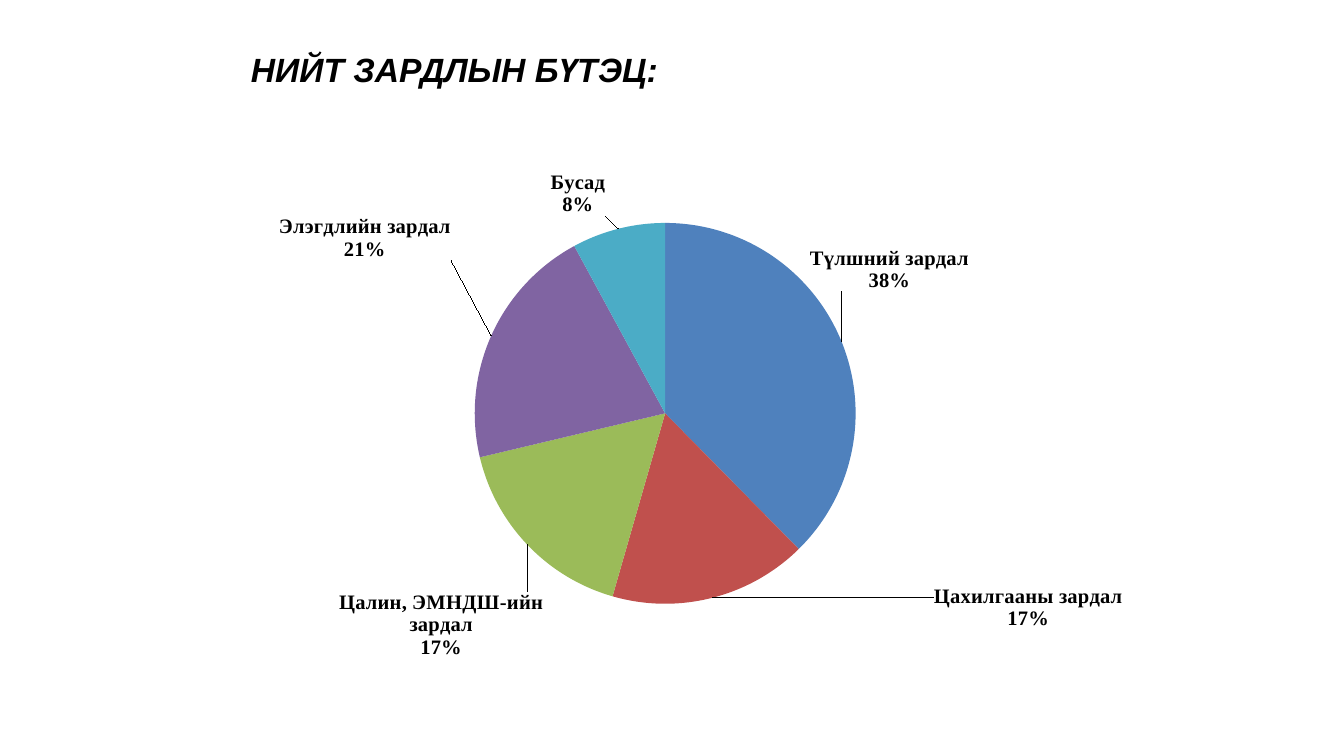
from lxml.etree import SubElement
from pptx import Presentation
from pptx.chart.data import CategoryChartData
from pptx.dml.color import RGBColor
from pptx.enum.chart import XL_CHART_TYPE, XL_LABEL_POSITION
from pptx.enum.text import MSO_ANCHOR, PP_ALIGN
from pptx.oxml import parse_xml
from pptx.oxml.ns import nsdecls, qn
from pptx.util import Cm, Pt

BLACK = RGBColor(0x00, 0x00, 0x00)
BLUE = RGBColor(0x4F, 0x81, 0xBD)
RED = RGBColor(0xC0, 0x50, 0x4D)
GREEN = RGBColor(0x9B, 0xBB, 0x59)
PURPLE = RGBColor(0x80, 0x64, 0xA2)
TEAL = RGBColor(0x4B, 0xAC, 0xC6)


def place(**sides):
    layout = parse_xml(f"<c:layout {nsdecls('c')}><c:manualLayout/></c:layout>")
    for name, value in sides.items():
        SubElement(layout[0], qn(f"c:{name}")).set("val", str(value))
    return layout


def style(font):
    font.name = "Times New Roman"
    font.size = Pt(11)
    font.bold = True
    font.color.rgb = BLACK


deck = Presentation()
deck.slide_width = Cm(25.4)
deck.slide_height = Cm(14.29)
slide = deck.slides.add_slide(deck.slide_layouts[5])

title = slide.shapes.title
title.left, title.top = Cm(0.41), Cm(0.79)
title.width, title.height = Cm(16.54), Cm(1.7)
frame = title.text_frame
frame.word_wrap = True
frame.vertical_anchor = MSO_ANCHOR.TOP
para = frame.paragraphs[0]
para.alignment = PP_ALIGN.CENTER
run = para.add_run()
run.text = "НИЙТ ЗАРДЛЫН БҮТЭЦ: "
run.font.name = "Arial"
run.font.size = Pt(18)
run.font.bold = True
run.font.italic = True
run.font.color.rgb = BLACK

slices = [
    (" Түлшний зардал ", 38, BLUE, -0.04, -0.09),
    ("Цахилгааны зардал", 17, RED, 0.2, -0.04),
    ("Цалин, ЭМНДШ-ийн зардал", 17, GREEN, 0.02, 0.08),
    ("Элэгдлийн зардал", 21, PURPLE, -0.03, -0.14),
    ("Бусад", 8, TEAL, -0.01, -0.01),
]
data = CategoryChartData()
data.categories = [item[0] for item in slices]
data.add_series("Series 1", [item[1] for item in slices])
chart = slide.shapes.add_chart(
    XL_CHART_TYPE.PIE, Cm(2.08), Cm(2.95), Cm(20.78), Cm(9.73), data
).chart
chart.has_title = False
chart.has_legend = False
chart.font.name = "Calibri"
chart.font.size = Pt(10)
chart.font.color.rgb = BLACK

plot = chart.plots[0]
plot.vary_by_categories = True
area = chart.element.find(".//" + qn("c:plotArea"))
for old in area.findall(qn("c:layout")):
    area.remove(old)
area.insert(0, place(layoutTarget="inner", xMode="edge", yMode="edge",
                     x=0.33, y=0.13, w=0.35, h=0.74))

series = plot.series[0]
labels = series.data_labels
labels.show_value = False
labels.show_category_name = True
labels.show_percentage = True
labels.number_format = "0%"
labels.number_format_is_linked = False
labels.position = XL_LABEL_POSITION.OUTSIDE_END
style(labels.font)

for i, (name, value, color, x, y) in enumerate(slices):
    point = series.points[i]
    point.format.fill.solid()
    point.format.fill.fore_color.rgb = color
    point.data_label.position = XL_LABEL_POSITION.OUTSIDE_END
    style(point.data_label.font)

group = series.data_labels._element
for label, (name, value, color, x, y) in zip(group.findall(qn("c:dLbl")), slices):
    label.find(qn("c:idx")).addnext(place(x=x, y=y))
    for tag, flag in (("showVal", "0"), ("showCatName", "1"), ("showPercent", "1")):
        label.find(qn(f"c:{tag}")).set("val", flag)

for node in [group, *group.findall(qn("c:dLbl"))]:
    gap = parse_xml(f"<c:separator {nsdecls('c')}>\n</c:separator>")
    last = node.find(qn("c:showBubbleSize"))
    if last is None:
        last = node.find(qn("c:showPercent"))
    last.addnext(gap)

deck.save("out.pptx")
